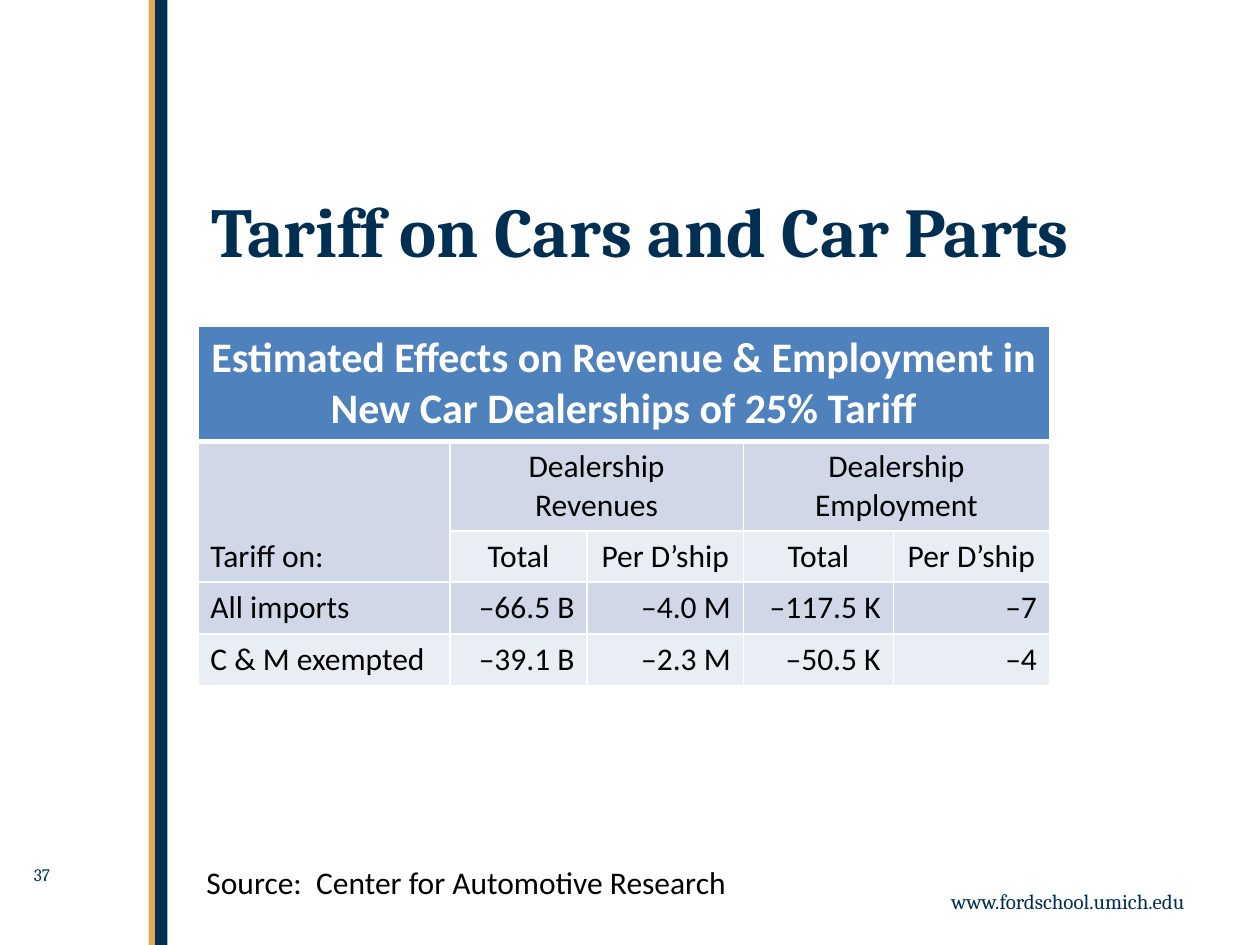
import pptx
import pptx.dml.color
import pptx.enum.shapes
import pptx.enum.text
import pptx.oxml
import pptx.oxml.ns
import pptx.util

Inches = pptx.util.Inches
Pt = pptx.util.Pt
ALIGN = pptx.enum.text.PP_ALIGN
ANCHOR = pptx.enum.text.MSO_ANCHOR

NAVY, GOLD, BLUE = "002F52", "E3A856", "4F81BD"
WHITE, BLACK = "FFFFFF", "000000"
BANDS = ["E9EDF4", "D0D8E8"]

TITLE = "Tariff on Cars and Car Parts"
BARS = [(1.23, 0.1, NAVY), (1.18, 0.05, GOLD)]
LABELS = [
    ("www.fordschool.umich.edu", (7, 7, 2.5, 0.3), 12, "Cambria", NAVY, ALIGN.RIGHT),
    ("37", (0.17, 6.81, 0.92, 0.34), 10, "Cambria", NAVY, ALIGN.LEFT),
    ("Source:  Center for Automotive Research", (1.54, 6.8, 4.91, 0.4),
     18, "Calibri", BLACK, ALIGN.LEFT),
]
COLUMN_WIDTHS = [2, 1.09, 1.24, 1.19, 1.24]
ROW_HEIGHTS = [0.9, 0.69, 0.4, 0.41, 0.41]
ROWS = [
    ["Estimated Effects on Revenue & Employment in New Car Dealerships of 25% Tariff",
     "", "", "", ""],
    ["Tariff on:", "Dealership\nRevenues", "", "Dealership Employment", ""],
    ["", "Total", "Per D’ship", "Total", "Per D’ship"],
    ["All imports", "–66.5 B", "–4.0 M", "–117.5 K", "–7"],
    ["C & M exempted", "–39.1 B", "–2.3 M", "–50.5 K", "–4"],
]
MERGES = [((0, 0), (0, 4)), ((1, 0), (2, 0)), ((1, 1), (1, 2)), ((1, 3), (1, 4))]


def color(code):
    return pptx.dml.color.RGBColor.from_string(code)


def style(frame, size, name, code, align, bold=False):
    for para in frame.paragraphs:
        para.alignment = align
        para.font.size = Pt(size)
        para.font.name = name
        para.font.bold = bold
        para.font.color.rgb = color(code)


def add_bar(page, left, width, code):
    bar = page.shapes.add_shape(pptx.enum.shapes.MSO_SHAPE.RECTANGLE,
                                Inches(left), 0, Inches(width), Inches(7.5))
    bar.shadow.inherit = False
    bar.fill.solid()
    bar.fill.fore_color.rgb = color(code)
    bar.line.fill.background()


def add_label(page, text, place, size, name, code, align):
    box = page.shapes.add_textbox(*map(Inches, place))
    box.text_frame.word_wrap = True
    box.text_frame.text = text
    style(box.text_frame, size, name, code, align)


def set_borders(cell, widths):
    properties = cell._tc.get_or_add_tcPr()
    for side, width in zip("LRTB", widths):
        properties.append(pptx.oxml.parse_xml(
            f'<a:ln{side} {pptx.oxml.ns.nsdecls("a")} w="{Pt(width)}"><a:solidFill>'
            f'<a:srgbClr val="{WHITE}"/></a:solidFill></a:ln{side}>'))


def fill_cell(cell, text, row, column):
    header = row == 0
    set_borders(cell, (1, 1, 3 if row == 1 else 1, 3 if header else 1))
    cell.fill.solid()
    banded = 1 if column == 0 and row == 2 else row % 2
    cell.fill.fore_color.rgb = color(BLUE if header else BANDS[banded])
    cell.text = text
    if header or (row < 3 and column):
        align = ALIGN.CENTER
    else:
        align = ALIGN.RIGHT if column else ALIGN.LEFT
    style(cell.text_frame, 24 if header else 18, "Calibri",
          WHITE if header else BLACK, align, header)


def add_effects_table(page):
    table = page.shapes.add_table(
        len(ROWS), len(COLUMN_WIDTHS), Inches(1.57), Inches(2.59),
        Inches(sum(COLUMN_WIDTHS)), Inches(sum(ROW_HEIGHTS))).table
    for column, width in zip(table.columns, COLUMN_WIDTHS):
        column.width = Inches(width)
    for row, height in zip(table.rows, ROW_HEIGHTS):
        row.height = Inches(height)
    for row, texts in enumerate(ROWS):
        for column, text in enumerate(texts):
            fill_cell(table.cell(row, column), text, row, column)
    for first, last in MERGES:
        table.cell(*first).merge(table.cell(*last))
    table.cell(1, 0).vertical_anchor = ANCHOR.BOTTOM


def main():
    deck = pptx.Presentation()
    deck.slide_width, deck.slide_height = Inches(10), Inches(7.5)
    page = deck.slides.add_slide(deck.slide_layouts[5])
    for bar in BARS:
        add_bar(page, *bar)
    add_effects_table(page)
    for label in LABELS:
        add_label(page, *label)
    title = page.shapes.title
    title.left, title.top, title.width, title.height = map(Inches, (1.58, 1.44, 7.92, 1.23))
    title.text_frame.text = TITLE
    title.text_frame.vertical_anchor = ANCHOR.TOP
    style(title.text_frame, 40, "Cambria", NAVY, ALIGN.LEFT, True)
    deck.save("out.pptx")


if __name__ == "__main__":
    main()
